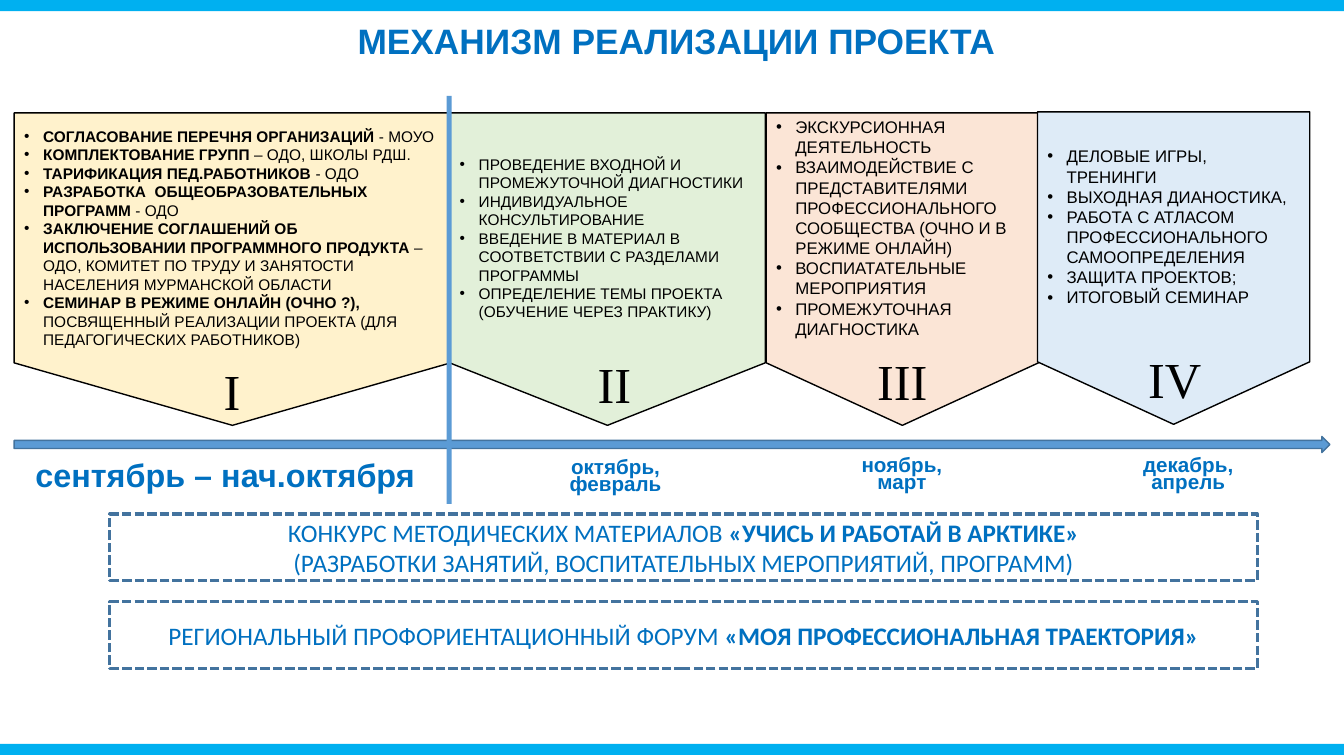
from dataclasses import dataclass

from lxml import etree
from pptx import Presentation
from pptx.dml.color import RGBColor
from pptx.enum import dml, shapes, text
from pptx.oxml.ns import qn
from pptx.util import Emu, Pt

PX = 9144  # one px is a hundredth of an inch
WIDTH, HEIGHT = 1333, 750
BLUE, BLACK, WHITE = "0070C0", "000000", "FFFFFF"
STEEL, STEEL_EDGE, BAND = "5B9BD5", "43739E", "00B0F0"
CENTER, LEFT = text.PP_ALIGN.CENTER, text.PP_ALIGN.LEFT


@dataclass
class Run:
    text: str
    bold: bool = False


@dataclass
class Style:
    size: float
    font: str = "Arial"
    color: str = BLACK
    align: text.PP_ALIGN = LEFT
    spacing: float = 1.0
    bullet: bool = False


@dataclass
class Stage:
    left: int
    top: int
    width: int
    fill: str
    size: int
    bottom_inset: int
    items: list[list[Run]]
    numeral: str
    numeral_box: tuple[int, int, int, int]


@dataclass
class Period:
    left: int
    top: int
    lines: list[str]
    size: float
    spacing: float


@dataclass
class Event:
    top: int
    lines: list[list[Run]]


def px(value: int) -> Emu:
    return Emu(value * PX)


def rgb(color: str) -> RGBColor:
    return RGBColor.from_string(color)


def plain(*lines: str) -> list[list[Run]]:
    return [[Run(line)] for line in lines]


def lead(bold: str, rest: str) -> list[Run]:
    return [Run(bold, True), Run(rest)]


def add_bullet(paragraph) -> None:
    properties = paragraph._p.get_or_add_pPr()
    properties.set("marL", str(px(19)))
    properties.set("indent", str(px(-19)))
    etree.SubElement(properties, qn("a:buFont")).set("typeface", "Arial")
    etree.SubElement(properties, qn("a:buChar")).set("char", "•")


def write(frame, lines: list[list[Run]], style: Style, wrap: bool = True) -> None:
    frame.word_wrap = wrap
    frame.vertical_anchor = text.MSO_ANCHOR.MIDDLE
    for index, line in enumerate(lines):
        paragraph = frame.add_paragraph() if index else frame.paragraphs[0]
        paragraph.alignment = style.align
        paragraph.line_spacing = style.spacing
        paragraph.space_before = Pt(0)
        if style.bullet:
            add_bullet(paragraph)
        for part in line:
            run = paragraph.add_run()
            run.text = part.text
            run.font.name = style.font
            run.font.size = Pt(style.size)
            run.font.bold = part.bold
            run.font.color.rgb = rgb(style.color)


def add_shape(slide, kind, box: tuple[int, int, int, int], fill: str,
              line: str = "", weight: float = 1):
    shape = slide.shapes.add_shape(kind, *map(px, box))
    shape.shadow.inherit = False
    shape.fill.solid()
    shape.fill.fore_color.rgb = rgb(fill)
    if line:
        shape.line.color.rgb = rgb(line)
        shape.line.width = Pt(weight)
    else:
        shape.line.fill.background()
    return shape


def add_stage(slide, stage: Stage) -> None:
    box = (stage.left, stage.top, stage.width, 310)
    shape = add_shape(slide, shapes.MSO_SHAPE.FLOWCHART_OFFPAGE_CONNECTOR, box, stage.fill, BLACK)
    shape.text_frame.margin_bottom = px(stage.bottom_inset)
    write(shape.text_frame, stage.items, Style(stage.size, bullet=True))
    numeral = slide.shapes.add_textbox(*map(px, stage.numeral_box))
    write(numeral.text_frame, plain(stage.numeral), Style(36, "Times New Roman"), wrap=False)


def add_period(slide, period: Period) -> None:
    label = slide.shapes.add_textbox(*map(px, (period.left, period.top, 399, 46)))
    lines = [[Run(line, True)] for line in period.lines]
    write(label.text_frame, lines, Style(period.size, "Arial", BLUE, CENTER, period.spacing))


def add_event(slide, event: Event) -> None:
    shape = add_shape(slide, shapes.MSO_SHAPE.RECTANGLE, (109, event.top, 1138, 66),
                      WHITE, STEEL_EDGE, 2.25)
    shape.line.dash_style = dml.MSO_LINE.SQUARE_DOT
    write(shape.text_frame, event.lines, Style(18, "Calibri", BLUE, CENTER))


STAGES = [
    Stage(14, 112, 433, "FFF2CC", 11, 5, [
        lead("СОГЛАСОВАНИЕ ПЕРЕЧНЯ ОРГАНИЗАЦИЙ ", "- МОУО"),
        lead("КОМПЛЕКТОВАНИЕ ГРУПП ", "– ОДО, ШКОЛЫ РДШ."),
        lead("ТАРИФИКАЦИЯ ПЕД.РАБОТНИКОВ ", "- ОДО"),
        lead("РАЗРАБОТКА  ОБЩЕОБРАЗОВАТЕЛЬНЫХ ПРОГРАММ", " - ОДО"),
        lead("ЗАКЛЮЧЕНИЕ СОГЛАШЕНИЙ ОБ ИСПОЛЬЗОВАНИИ ПРОГРАММНОГО ПРОДУКТА ",
             "– ОДО, КОМИТЕТ ПО ТРУДУ И ЗАНЯТОСТИ НАСЕЛЕНИЯ МУРМАНСКОЙ ОБЛАСТИ"),
        lead("СЕМИНАР В РЕЖИМЕ ОНЛАЙН (ОЧНО ?), ",
             "ПОСВЯЩЕННЫЙ РЕАЛИЗАЦИИ ПРОЕКТА (ДЛЯ ПЕДАГОГИЧЕСКИХ РАБОТНИКОВ)"),
    ], "I", (212, 352, 37, 71)),
    Stage(446, 112, 313, "E2F0D9", 11, 5, plain(
        "ПРОВЕДЕНИЕ ВХОДНОЙ И ПРОМЕЖУТОЧНОЙ ДИАГНОСТИКИ",
        "ИНДИВИДУАЛЬНОЕ КОНСУЛЬТИРОВАНИЕ",
        "ВВЕДЕНИЕ В МАТЕРИАЛ В СООТВЕТСТВИИ С РАЗДЕЛАМИ ПРОГРАММЫ",
        "ОПРЕДЕЛЕНИЕ ТЕМЫ ПРОЕКТА (ОБУЧЕНИЕ ЧЕРЕЗ ПРАКТИКУ)",
    ), "II", (583, 345, 54, 71)),
    Stage(760, 112, 270, "FBE5D6", 12, 25, plain(
        "ЭКСКУРСИОННАЯ ДЕЯТЕЛЬНОСТЬ",
        "ВЗАИМОДЕЙСТВИЕ С ПРЕДСТАВИТЕЛЯМИ ПРОФЕССИОНАЛЬНОГО СООБЩЕСТВА "
        "(ОЧНО И В РЕЖИМЕ ОНЛАЙН)",
        "ВОСПИАТАТЕЛЬНЫЕ МЕРОПРИЯТИЯ",
        "ПРОМЕЖУТОЧНАЯ ДИАГНОСТИКА",
    ), "III", (860, 342, 71, 71)),
    Stage(1029, 111, 270, "DEEBF7", 12, 25, plain(
        "ДЕЛОВЫЕ ИГРЫ, ТРЕНИНГИ",
        "ВЫХОДНАЯ ДИАНОСТИКА,",
        "РАБОТА С АТЛАСОМ ПРОФЕССИОНАЛЬНОГО САМООПРЕДЕЛЕНИЯ",
        "ЗАЩИТА ПРОЕКТОВ;",
        "ИТОГОВЫЙ СЕМИНАР",
    ), "IV", (1129, 340, 73, 71)),
]
PERIODS = [
    Period(24, 451, ["сентябрь – нач.октября"], 23.1, 0.8),
    Period(411, 451, ["октябрь,", "февраль"], 14.7, 0.7),
    Period(695, 449, ["ноябрь,", "март"], 14.7, 0.7),
    Period(979, 449, ["декабрь,", "апрель"], 14.7, 0.7),
]
EVENTS = [
    Event(510, [[Run("КОНКУРС МЕТОДИЧЕСКИХ МАТЕРИАЛОВ "), Run("«УЧИСЬ И РАБОТАЙ В АРКТИКЕ»", True)],
                [Run("(РАЗРАБОТКИ ЗАНЯТИЙ, ВОСПИТАТЕЛЬНЫХ МЕРОПРИЯТИЙ, ПРОГРАММ)")]]),
    Event(597, [[Run("РЕГИОНАЛЬНЫЙ ПРОФОРИЕНТАЦИОННЫЙ ФОРУМ "),
                 Run("«МОЯ ПРОФЕССИОНАЛЬНАЯ ТРАЕКТОРИЯ»", True)]]),
]


def main() -> None:
    presentation = Presentation()
    presentation.slide_width, presentation.slide_height = px(WIDTH), px(HEIGHT)
    slide = presentation.slides.add_slide(presentation.slide_layouts[5])

    # Title
    title = slide.shapes.title
    title.left, title.top, title.width, title.height = map(px, (96, 20, 1150, 46))
    title.text_frame.auto_size = text.MSO_AUTO_SIZE.NONE
    write(title.text_frame, [[Run("МЕХАНИЗМ РЕАЛИЗАЦИИ ПРОЕКТА", True)]],
          Style(25.2, "Arial", BLUE, CENTER, 0.9))

    # Timeline, stages and events
    add_shape(slide, shapes.MSO_SHAPE.RIGHT_ARROW, (14, 433, 1305, 16), STEEL, STEEL_EDGE)
    for stage in STAGES:
        add_stage(slide, stage)
    for event in EVENTS:
        add_event(slide, event)

    # Edge bands and the divider after the first stage
    for box, fill in [((0, 0, WIDTH, 11), BAND), ((0, 738, WIDTH, 11), BAND),
                      ((443, 95, 5, 405), STEEL)]:
        add_shape(slide, shapes.MSO_SHAPE.RECTANGLE, box, fill)

    # Periods under the timeline
    for period in PERIODS:
        add_period(slide, period)
    presentation.save("out.pptx")


if __name__ == "__main__":
    main()
